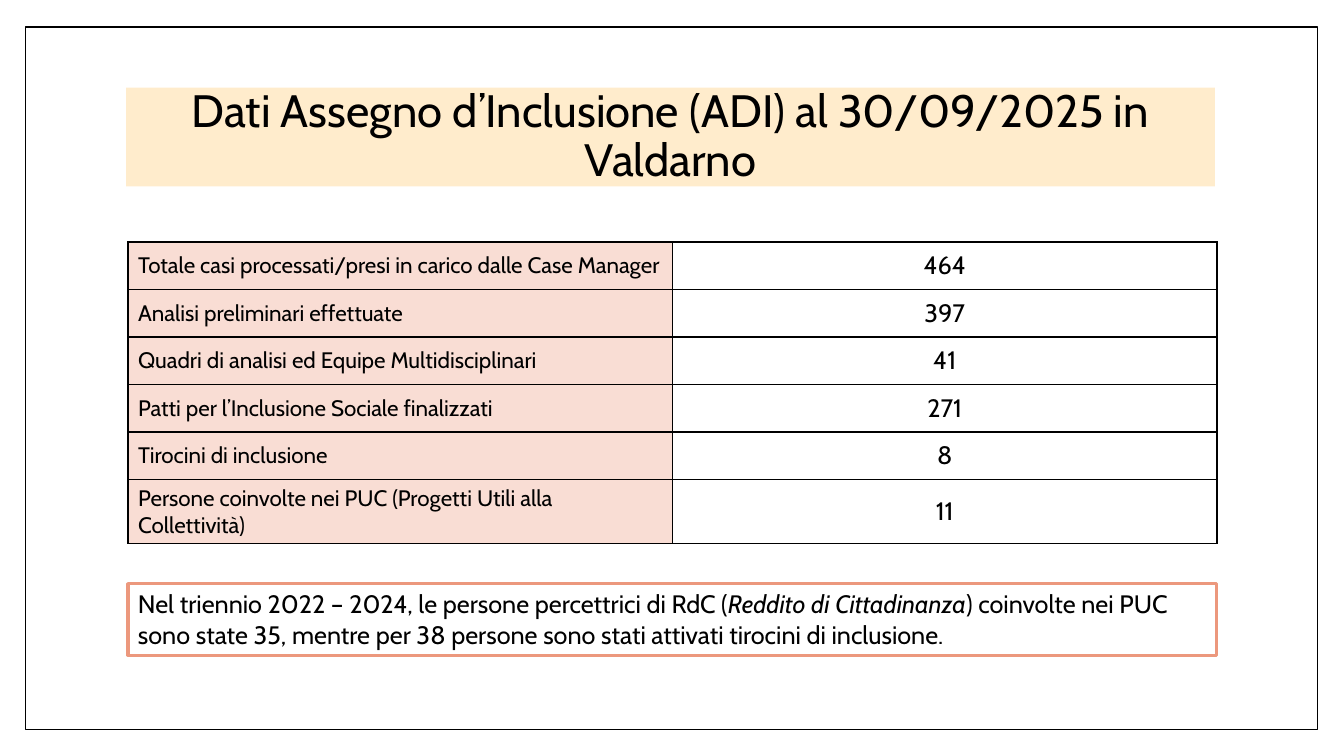
import pptx
import pptx.dml.color
import pptx.enum.shapes
import pptx.enum.text
import pptx.oxml
import pptx.oxml.ns
import pptx.util
from pptx.util import Inches

RGBColor = pptx.dml.color.RGBColor
ALIGN = pptx.enum.text.PP_ALIGN
MIDDLE = pptx.enum.text.MSO_ANCHOR.MIDDLE

BLACK = RGBColor(0x00, 0x00, 0x00)
WHITE = RGBColor(0xFF, 0xFF, 0xFF)
CREAM = RGBColor(0xFF, 0xEC, 0xCC)
PINK = RGBColor(0xF9, 0xDD, 0xD4)
CORAL = RGBColor(0xEC, 0x98, 0x7D)

FONT = "Cabin"
TITLE = "Dati Assegno d’Inclusione (ADI) al 30/09/2025 in Valdarno"
ADI_DATA = [
    ("Totale casi processati/presi in carico dalle Case Manager", "464"),
    ("Analisi preliminari effettuate", "397"),
    ("Quadri di analisi ed Equipe Multidisciplinari", "41"),
    ("Patti per l’Inclusione Sociale finalizzati", "271"),
    ("Tirocini di inclusione", "8"),
    ("Persone coinvolte nei PUC (Progetti Utili alla Collettività)", "11"),
]
NOTE = [
    ("Nel triennio 2022 – 2024, le persone percettrici di RdC (", False),
    ("Reddito di Cittadinanza", True),
    (") coinvolte nei PUC sono state 35, mentre per 38 persone "
     "sono stati attivati tirocini di inclusione.", False),
]


def add_run(p, text, size, italic=False):
    r = p.add_run()
    r.text = text
    font_format = {"name": FONT, "size": pptx.util.Pt(size), "italic": italic}
    for name, value in font_format.items():
        setattr(r.font, name, value)
    r.font.color.rgb = BLACK


def fill_solid(item, color):
    item.fill.solid()
    item.fill.fore_color.rgb = color


def add_box(s, left, top, width, height, line_color, line_width):
    box = s.shapes.add_shape(
        pptx.enum.shapes.MSO_SHAPE.RECTANGLE,
        Inches(left), Inches(top), Inches(width), Inches(height))
    box.shadow.inherit = False
    fill_solid(box, WHITE)
    box.line.color.rgb = line_color
    box.line.width = pptx.util.Pt(line_width)
    return box


def format_title(title):
    place = {"left": 1.25, "top": 0.87, "width": 10.8, "height": 0.98}
    for name, value in place.items():
        setattr(title, name, Inches(value))
    fill_solid(title, CREAM)
    tf = title.text_frame
    tf.word_wrap = True
    tf.auto_size = pptx.enum.text.MSO_AUTO_SIZE.NONE
    tf.vertical_anchor = MIDDLE
    p = tf.paragraphs[0]
    p.alignment = ALIGN.CENTER
    p.line_spacing = 0.9
    add_run(p, TITLE, 32.4)


def add_borders(cell):
    tc_pr = cell._tc.get_or_add_tcPr()
    for side in ("lnL", "lnR", "lnT", "lnB"):
        tc_pr.append(pptx.oxml.parse_xml(
            f'<a:{side} {pptx.oxml.ns.nsdecls("a")} w="12700"><a:solidFill>'
            f'<a:srgbClr val="{BLACK}"/></a:solidFill></a:{side}>'))


def fill_cell(cell, text, size, alignment):
    add_borders(cell)
    cell.vertical_anchor = MIDDLE
    p = cell.text_frame.paragraphs[0]
    p.alignment = alignment
    add_run(p, text, size)


def add_data_table(s):
    table = s.shapes.add_table(
        len(ADI_DATA), 2, Inches(1.27), Inches(2.4),
        Inches(10.8), Inches(2.83)).table
    table.first_row = False
    table.horz_banding = False
    for i, (label, value) in enumerate(ADI_DATA):
        label_cell, value_cell = table.cell(i, 0), table.cell(i, 1)
        fill_cell(label_cell, label, 16, ALIGN.LEFT)
        fill_solid(label_cell, PINK)
        fill_cell(value_cell, value, 18, ALIGN.CENTER)
        value_cell.fill.background()


def add_note(s):
    tf = add_box(s, 1.27, 5.79, 10.8, 0.71, CORAL, 2.25).text_frame
    tf.word_wrap = True
    tf.auto_size = pptx.enum.text.MSO_AUTO_SIZE.SHAPE_TO_FIT_TEXT
    tf.vertical_anchor = pptx.enum.text.MSO_ANCHOR.TOP
    p = tf.paragraphs[0]
    p.alignment = ALIGN.LEFT
    for text, italic in NOTE:
        add_run(p, text, 18, italic)


def main():
    prs = pptx.Presentation()
    prs.slide_width, prs.slide_height = Inches(13.33), Inches(7.5)
    s = prs.slides.add_slide(prs.slide_layouts.get_by_name("Title Only"))

    # Page frame, behind the title
    frame = add_box(s, 0.25, 0.27, 12.82, 6.97, BLACK, 1)
    title = s.shapes.title
    title.element.addprevious(frame.element)
    format_title(title)

    # Figures and closing note
    add_data_table(s)
    add_note(s)
    prs.save("out.pptx")


if __name__ == "__main__":
    main()
